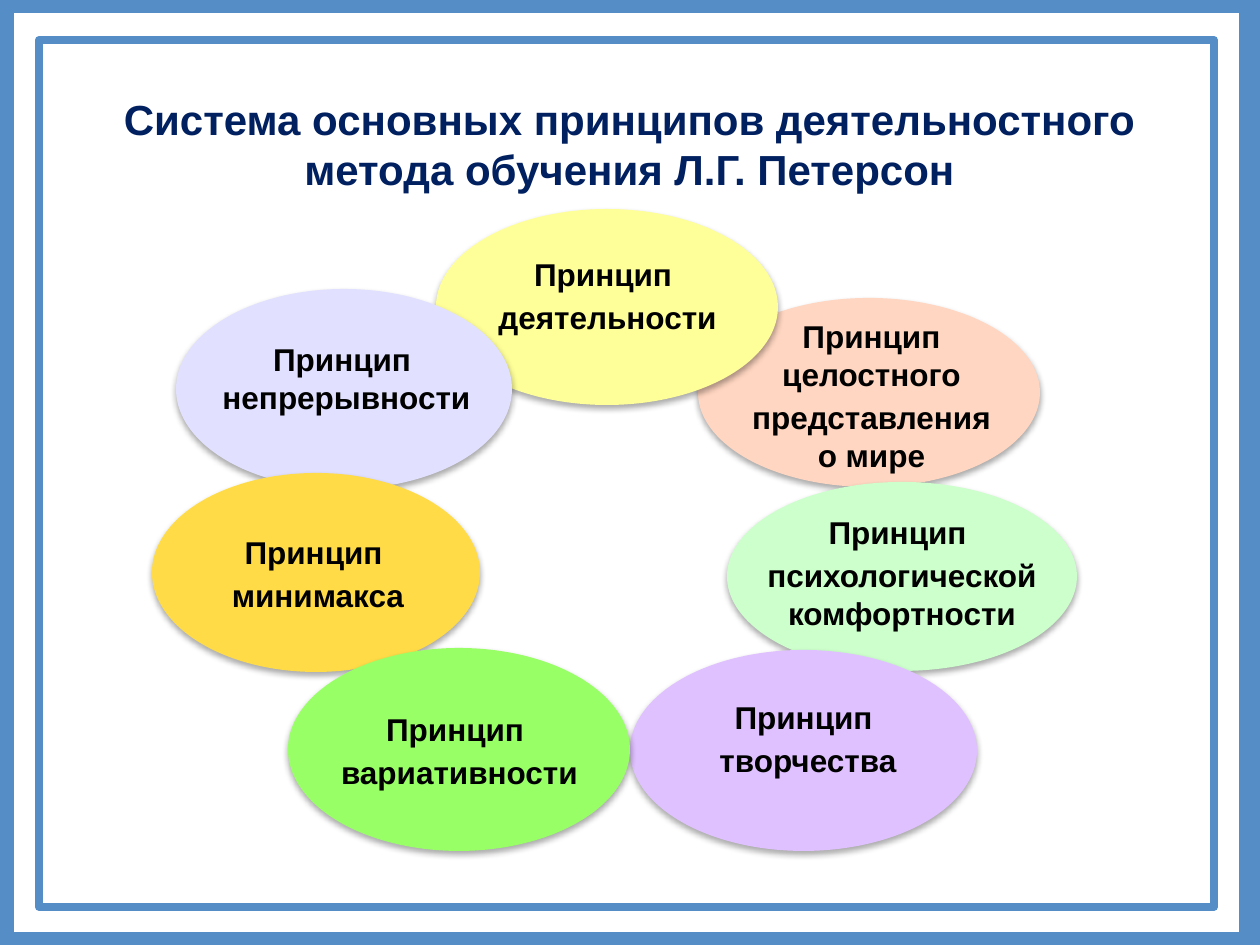
from dataclasses import dataclass

from lxml.etree import SubElement
from pptx import Presentation
from pptx.dml.color import RGBColor
from pptx.enum.shapes import MSO_SHAPE
from pptx.enum.text import MSO_ANCHOR, MSO_AUTO_SIZE, PP_ALIGN
from pptx.oxml.ns import qn
from pptx.util import Emu, Pt

PIXEL = 914400 // 126
COLORS = {
    "peach": "FFD6C1",
    "yellow": "FFFF99",
    "lavender": "E1E1FF",
    "gold": "FFDC47",
    "mint": "CCFFCC",
    "violet": "E0C1FF",
    "lime": "99FF66",
    "frame": "558EC7",
    "title": "002060",
    "label": "000000",
    "shadow": "000000",
}
TITLE_FONT = {"name": "Arial", "size": Pt(24), "bold": True}
LABEL_FONT = {"name": "Arial", "size": Pt(18), "bold": True}


@dataclass(frozen=True)
class Box:
    left: int
    top: int
    width: int
    height: int

    def lengths(self) -> list[Emu]:
        return [Emu(value * PIXEL) for value in (self.left, self.top, self.width, self.height)]


@dataclass(frozen=True)
class Principle:
    color: str
    ellipse: Box
    label: Box
    lines: tuple[str, ...]
    gap: int = 3


@dataclass(frozen=True)
class Frame:
    box: Box
    line_width: float


PRINCIPLES = [
    Principle("peach", Box(698, 298, 342, 189), Box(727, 311, 289, 140),
              ("Принцип целостного", "представления о мире")),
    Principle("yellow", Box(436, 209, 342, 196), Box(452, 249, 311, 138),
              ("Принцип ", "деятельности")),
    Principle("lavender", Box(176, 289, 336, 200), Box(195, 334, 303, 138),
              ("Принцип ", "непрерывности"), 0),
    Principle("gold", Box(152, 473, 328, 199), Box(165, 527, 306, 98),
              ("Принцип ", "минимакса")),
    Principle("mint", Box(727, 482, 350, 189), Box(747, 507, 310, 140),
              ("Принцип ", "психологической комфортности")),
    Principle("violet", Box(630, 650, 347, 201), Box(636, 692, 344, 138),
              ("Принцип ", "творчества")),
    Principle("lime", Box(288, 648, 342, 203), Box(299, 704, 321, 138),
              ("Принцип ", "вариативности")),
]
FRAMES = [
    Frame(Box(1, 0, 1251, 945), 15),
    Frame(Box(39, 40, 1175, 867), 4.5),
]


def color_of(name: str) -> RGBColor:
    return RGBColor.from_string(COLORS[name])


def apply_format(target, values: dict) -> None:
    for name, value in values.items():
        setattr(target, name, value)


def add_shadow(effects) -> None:
    shadow = SubElement(effects, qn("a:outerShdw"), blurRad=str(Pt(3.5)),
                        dist=str(Pt(2.2)), dir="5400000", algn="ctr", rotWithShape="0")
    color = SubElement(shadow, qn("a:srgbClr"), val=COLORS["shadow"])
    SubElement(color, qn("a:alpha"), val="32000")


def add_ellipse(slide, principle: Principle) -> None:
    shape = slide.shapes.add_shape(MSO_SHAPE.OVAL, *principle.ellipse.lengths())
    shape.fill.solid()
    shape.fill.fore_color.rgb = color_of(principle.color)
    shape.line.fill.background()
    shape.shadow.inherit = False
    add_shadow(shape._element.spPr.find(qn("a:effectLst")))


def add_label(slide, principle: Principle) -> None:
    frame = slide.shapes.add_textbox(*principle.label.lengths()).text_frame
    frame.word_wrap = True
    for index, line in enumerate(principle.lines):
        paragraph = frame.add_paragraph() if index else frame.paragraphs[0]
        apply_format(paragraph, {"alignment": PP_ALIGN.CENTER, "space_after": Pt(principle.gap)})
        run = paragraph.add_run()
        run.text = line
        apply_format(run.font, LABEL_FONT)
        run.font.color.rgb = color_of("label")
        properties = run._r.get_or_add_rPr()
        effects = SubElement(properties, qn("a:effectLst"))
        properties.find(qn("a:solidFill")).addnext(effects)
        add_shadow(effects)


def add_frame(slide, frame: Frame) -> None:
    shape = slide.shapes.add_shape(MSO_SHAPE.RECTANGLE, *frame.box.lengths())
    shape.fill.background()
    shape.line.color.rgb = color_of("frame")
    shape.line.width = Pt(frame.line_width)
    shape.shadow.inherit = False


def set_title(slide, text: str, box: Box) -> None:
    title = slide.shapes.title
    apply_format(title, dict(zip(("left", "top", "width", "height"), box.lengths())))
    apply_format(title.text_frame, {
        "text": text,
        "word_wrap": True,
        "auto_size": MSO_AUTO_SIZE.NONE,
        "vertical_anchor": MSO_ANCHOR.MIDDLE,
    })
    paragraph = title.text_frame.paragraphs[0]
    paragraph.alignment = PP_ALIGN.CENTER
    font = paragraph.runs[0].font
    apply_format(font, TITLE_FONT)
    font.color.rgb = color_of("title")


def main() -> None:
    presentation = Presentation()
    presentation.slide_width = Emu(1260 * PIXEL)
    presentation.slide_height = Emu(945 * PIXEL)
    slide = presentation.slides.add_slide(presentation.slide_layouts[5])
    set_title(slide, "Система основных принципов деятельностного метода обучения Л.Г. Петерсон",
              Box(74, 71, 1111, 146))
    for principle in PRINCIPLES:
        add_ellipse(slide, principle)
        add_label(slide, principle)
    for frame in FRAMES:
        add_frame(slide, frame)
    presentation.save("out.pptx")


if __name__ == "__main__":
    main()
